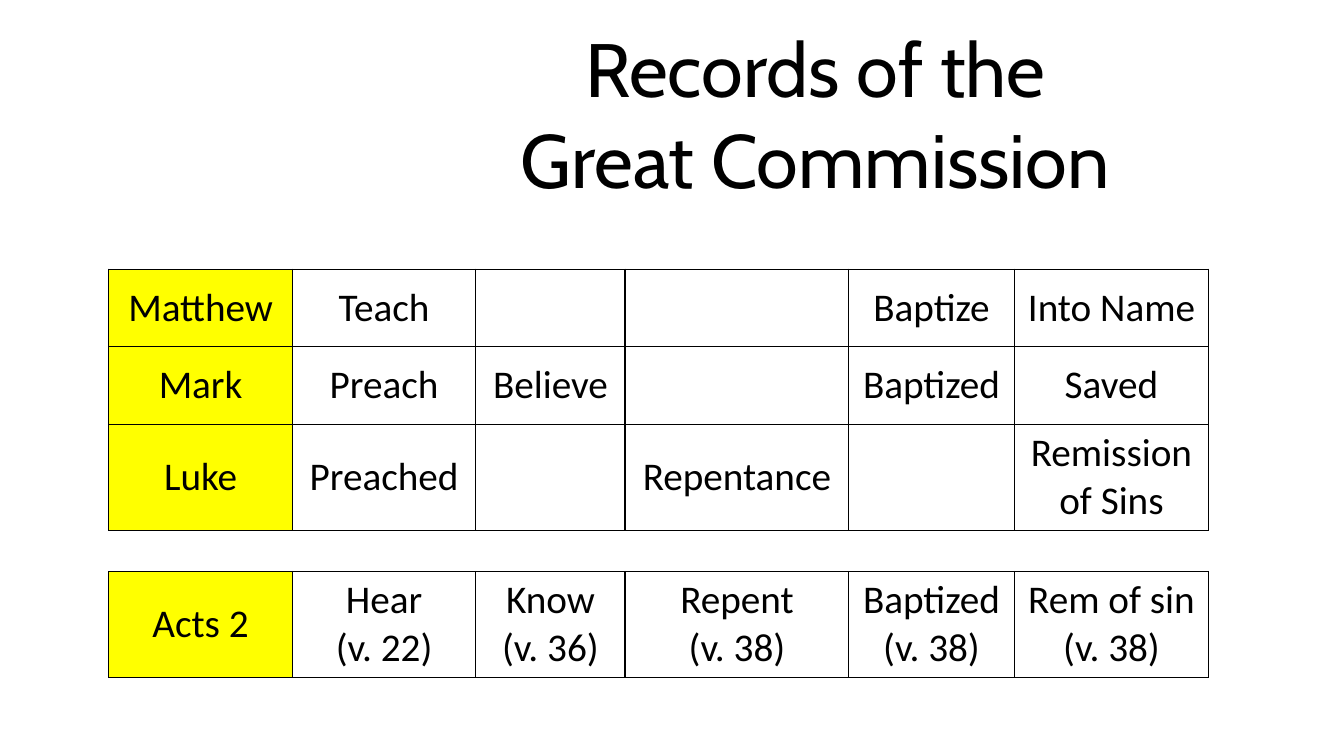
from dataclasses import dataclass

from lxml import etree
from pptx import Presentation
from pptx.dml.color import RGBColor
from pptx.enum import text
from pptx.oxml import ns
from pptx.util import Inches, Pt


@dataclass(frozen=True)
class Theme:
    ink: str = "000000"
    paper: str = "FFFFFF"
    highlight: str = "FFFF00"
    title_font: str = "Cabin"
    table_font: str = "Calibri"
    title_size: int = 54
    table_size: int = 28
    border_width: int = 1


THEME = Theme()
TABLE_LEFT = 1.08
COLUMN_WIDTHS = [1.82, 1.82, 1.48, 2.22, 1.64, 1.93]
GOSPELS = [
    ["Matthew", "Teach", "", "", "Baptize", "Into Name"],
    ["Mark", "Preach", "Believe", "", "Baptized", "Saved"],
    ["Luke", "Preached", "", "Repentance", "", "Remission of Sins"],
]
ACTS = [["Acts 2", "Hear\n(v. 22)", "Know\n(v. 36)", "Repent\n(v. 38)",
         "Baptized\n(v. 38)", "Rem of sin\n(v. 38)"]]


def write(frame, wording, *, font, size, color=THEME.ink,
          align=text.PP_ALIGN.CENTER):
    """Fill a text frame, one paragraph per line of wording."""
    frame.text = wording
    for paragraph in frame.paragraphs:
        paragraph.alignment = align
        paragraph.font.name = font
        paragraph.font.size = Pt(size)
        paragraph.font.color.rgb = RGBColor.from_string(color)


def add_title(slide, wording, left, top, width, height):
    title = slide.shapes.title
    title.left, title.top = Inches(left), Inches(top)
    title.width, title.height = Inches(width), Inches(height)
    frame = title.text_frame
    frame.word_wrap = True
    frame.auto_size = text.MSO_AUTO_SIZE.NONE
    frame.vertical_anchor = text.MSO_ANCHOR.TOP
    write(frame, wording, font=THEME.title_font, size=THEME.title_size)


def outline_cell(cell):
    properties = cell._tc.get_or_add_tcPr()
    for side in ("a:lnL", "a:lnR", "a:lnT", "a:lnB"):
        line = etree.SubElement(properties, ns.qn(side),
                                w=str(Pt(THEME.border_width)))
        fill = etree.SubElement(line, ns.qn("a:solidFill"))
        etree.SubElement(fill, ns.qn("a:srgbClr"), val=THEME.ink)


def add_record_table(slide, records, top, row_heights):
    """Draw a bordered grid whose first column is highlighted."""
    table = slide.shapes.add_table(
        len(records), len(COLUMN_WIDTHS), Inches(TABLE_LEFT), Inches(top),
        Inches(sum(COLUMN_WIDTHS)), Inches(sum(row_heights))).table
    table.first_row = table.horz_banding = False
    for column, width in zip(table.columns, COLUMN_WIDTHS):
        column.width = Inches(width)
    for row, height, record in zip(table.rows, row_heights, records):
        row.height = Inches(height)
        for index, (cell, wording) in enumerate(zip(row.cells, record)):
            outline_cell(cell)
            cell.fill.solid()
            cell.fill.fore_color.rgb = RGBColor.from_string(
                THEME.paper if index else THEME.highlight)
            cell.vertical_anchor = text.MSO_ANCHOR.MIDDLE
            if wording:
                write(cell.text_frame, wording, font=THEME.table_font,
                      size=THEME.table_size)


def main():
    deck = Presentation()
    deck.slide_width, deck.slide_height = Inches(13.33), Inches(7.5)
    slide = deck.slides.add_slide(deck.slide_layouts.get_by_name("Title Only"))
    add_title(slide, "Records of the\nGreat Commission", 4.25, 0.17, 7.67, 1.92)
    add_record_table(slide, GOSPELS, 2.67, [0.77, 0.77, 1.03])
    add_record_table(slide, ACTS, 5.67, [1.03])
    deck.save("out.pptx")


if __name__ == "__main__":
    main()
